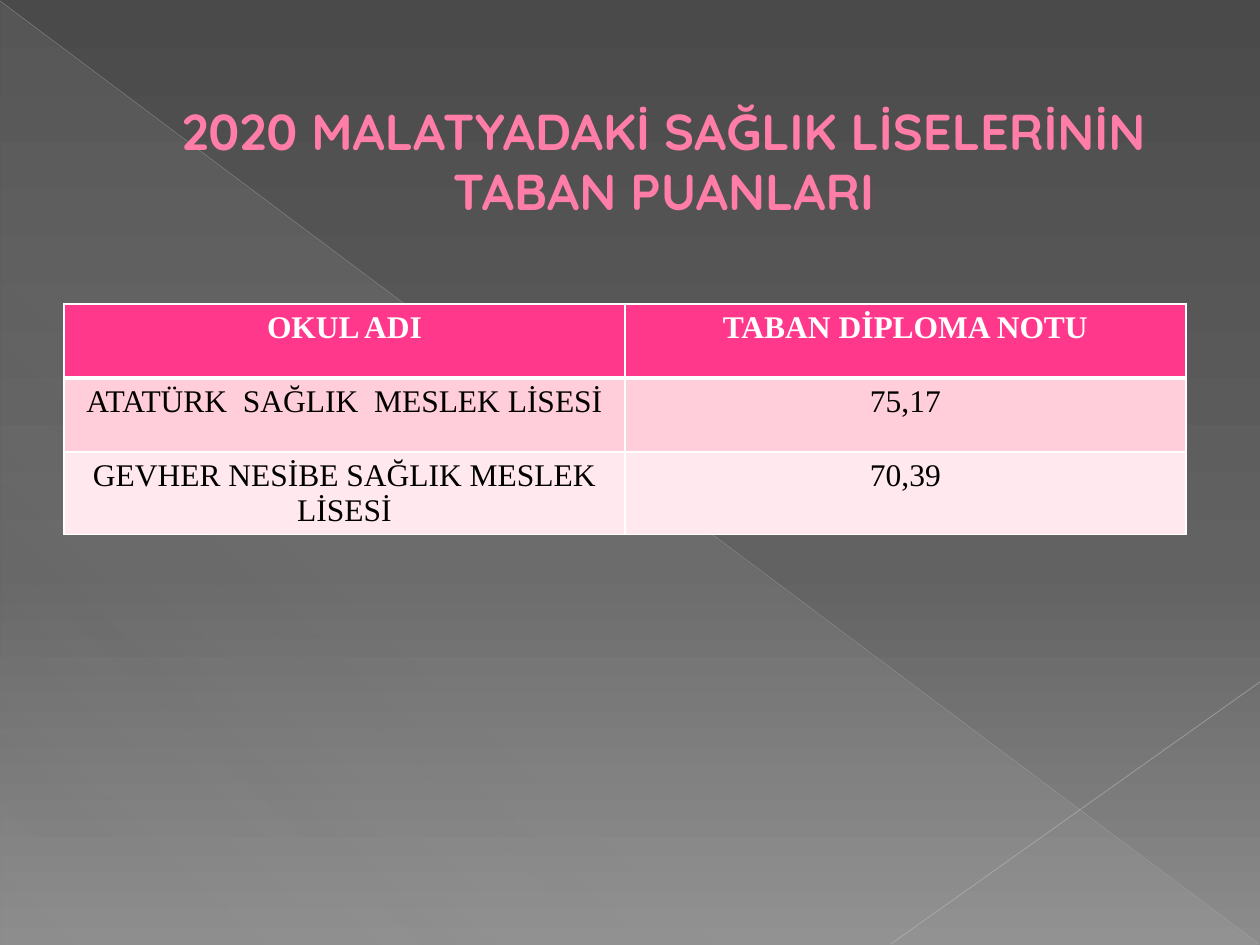
from lxml import etree
from pptx import Presentation
from pptx.dml.color import RGBColor
from pptx.enum.shapes import MSO_CONNECTOR, MSO_SHAPE
from pptx.enum.text import MSO_ANCHOR, MSO_AUTO_SIZE, PP_ALIGN
from pptx.oxml.ns import qn
from pptx.util import Pt

CENTER = PP_ALIGN.CENTER
MIDDLE = MSO_ANCHOR.MIDDLE
NO_AUTOFIT = MSO_AUTO_SIZE.NONE
STRAIGHT = MSO_CONNECTOR.STRAIGHT
TRIANGLE = MSO_SHAPE.RIGHT_TRIANGLE

EMU_PER_PX = 914400 // 126
TITLE_FONT = "Quicksand"
TABLE_FONT = "Times New Roman"

WHITE = RGBColor(0xFF, 0xFF, 0xFF)
BLACK = RGBColor(0x00, 0x00, 0x00)
TITLE_PINK = RGBColor(0xFF, 0x7D, 0xA7)
TITLE_EDGE = RGBColor(0xB1, 0x27, 0x61)
HEADER_PINK = RGBColor(0xFF, 0x38, 0x8C)
BAND_PINK = RGBColor(0xFF, 0xCE, 0xDA)
BAND_PALE = RGBColor(0xFF, 0xE8, 0xEE)
DARK_GREY = RGBColor(0x4A, 0x4A, 0x4A)
MID_GREY = RGBColor(0x62, 0x62, 0x62)
LIGHT_GREY = RGBColor(0x8C, 0x8C, 0x8C)
SHEEN_GREY = RGBColor(0xD2, 0xD2, 0xD2)
DIAGONAL_GREY = RGBColor(0xBF, 0xBF, 0xBF)
CORNER_GREY = RGBColor(0xC6, 0xC6, 0xC6)

TITLE_LINES = ["2020 MALATYADAKİ SAĞLIK LİSELERİNİN", "TABAN PUANLARI"]
SCHOOL_ROWS = [
    ["OKUL ADI", "TABAN DİPLOMA NOTU"],
    ["ATATÜRK  SAĞLIK  MESLEK LİSESİ", "75,17"],
    ["GEVHER NESİBE SAĞLIK MESLEK LİSESİ", "70,39"],
]
ROW_FILLS = [HEADER_PINK, BAND_PINK, BAND_PALE]


def px(length):
    return length * EMU_PER_PX


def add_color(parent, color, opacity=100):
    node = etree.SubElement(parent, qn("a:srgbClr"), val=str(color))
    if opacity < 100:
        etree.SubElement(node, qn("a:alpha"), val=str(opacity * 1000))


def set_gradient(properties, stops, angle):
    gradient = etree.Element(qn("a:gradFill"), rotWithShape="1")
    stop_list = etree.SubElement(gradient, qn("a:gsLst"))
    for position, color, opacity in stops:
        stop = etree.SubElement(stop_list, qn("a:gs"), pos=str(position * 1000))
        add_color(stop, color, opacity)
    etree.SubElement(gradient, qn("a:lin"), ang=str(angle * 60000), scaled="0")
    properties.replace(properties.find(qn("a:solidFill")), gradient)


def make_edge(tag, color, points):
    edge = etree.Element(qn(tag), w=str(Pt(points)))
    add_color(etree.SubElement(edge, qn("a:solidFill")), color)
    return edge


def write_text(paragraph, text, *, font, size, color, bold=False, outline=None):
    paragraph.alignment = CENTER
    run = paragraph.add_run()
    run.text = text
    run.font.name = font
    run.font.size = Pt(size)
    run.font.bold = bold
    run.font.color.rgb = color
    if outline:
        run.font.fill.solid()
        run.font.color.rgb = color
        run.font._element.insert(0, make_edge("a:ln", outline, 0.5))


def paint_background(slide):
    slide.background.fill.solid()
    properties = slide.element.find(".//" + qn("p:bgPr"))
    set_gradient(properties, [(0, DARK_GREY, 100), (60, MID_GREY, 100),
                              (100, LIGHT_GREY, 100)], 90)


def add_sheen(slide):
    sheen = slide.shapes.add_shape(TRIANGLE, px(1), px(2), px(1258), px(943))
    sheen.shadow.inherit = False
    sheen.line.fill.background()
    sheen.fill.solid()
    set_gradient(sheen.element.spPr, [(0, SHEEN_GREY, 10), (70, SHEEN_GREY, 8),
                                      (100, SHEEN_GREY, 1)], 133)


def add_ray(slide, start, end, color, points, opacity):
    ray = slide.shapes.add_connector(STRAIGHT, *map(px, start + end))
    ray.line.width = Pt(points)
    ray.line.fill.solid()
    ray.line.color.rgb = color
    tint = ray.element.spPr.find(".//" + qn("a:srgbClr"))
    etree.SubElement(tint, qn("a:alpha"), val=str(opacity * 1000))
    etree.SubElement(ray.element.spPr, qn("a:effectLst"))


def add_title(slide):
    title = slide.shapes.title
    title.left, title.top, title.width, title.height = map(px, (0, 97, 1260, 127))
    frame = title.text_frame
    frame.word_wrap = True
    frame.auto_size = NO_AUTOFIT
    frame.vertical_anchor = MIDDLE
    heading = frame.paragraphs[0]
    for index, line in enumerate(TITLE_LINES):
        if index:
            heading.add_line_break()
        write_text(heading, line, font=TITLE_FONT, size=28.8, color=TITLE_PINK,
                   bold=True, outline=TITLE_EDGE)
    indent = heading._p.get_or_add_pPr()
    indent.set("marL", str(px(67)))
    indent.set("indent", "0")
    title.element.getparent().append(title.element)


def set_borders(cell, top, bottom):
    widths = {"a:lnL": 1, "a:lnR": 1, "a:lnT": top, "a:lnB": bottom}
    properties = cell._tc.get_or_add_tcPr()
    for index, (side, points) in enumerate(widths.items()):
        properties.insert(index, make_edge(side, WHITE, points))


def add_score_table(slide):
    row_count, column_count = len(SCHOOL_ROWS), len(SCHOOL_ROWS[0])
    scores = slide.shapes.add_table(row_count, column_count, px(64), px(304),
                                    px(561 * column_count), px(74 * row_count)).table
    for row_index, (row, fill) in enumerate(zip(SCHOOL_ROWS, ROW_FILLS)):
        header = row_index == 0
        for column_index, text in enumerate(row):
            cell = scores.cell(row_index, column_index)
            cell.fill.solid()
            cell.fill.fore_color.rgb = fill
            set_borders(cell, top=3 if row_index == 1 else 1, bottom=3 if header else 1)
            write_text(cell.text_frame.paragraphs[0], text, font=TABLE_FONT, size=18,
                       color=WHITE if header else BLACK, bold=header)


def main():
    deck = Presentation()
    deck.slide_width, deck.slide_height = px(1260), px(945)
    slide = deck.slides.add_slide(deck.slide_layouts[5])
    paint_background(slide)
    add_sheen(slide)
    add_ray(slide, (0, 1), (1259, 944), DIAGONAL_GREY, 0.39, 35)
    add_ray(slide, (1260, 682), (891, 944), CORNER_GREY, 0.47, 45)
    add_title(slide)
    add_score_table(slide)
    deck.save("out.pptx")


if __name__ == "__main__":
    main()
